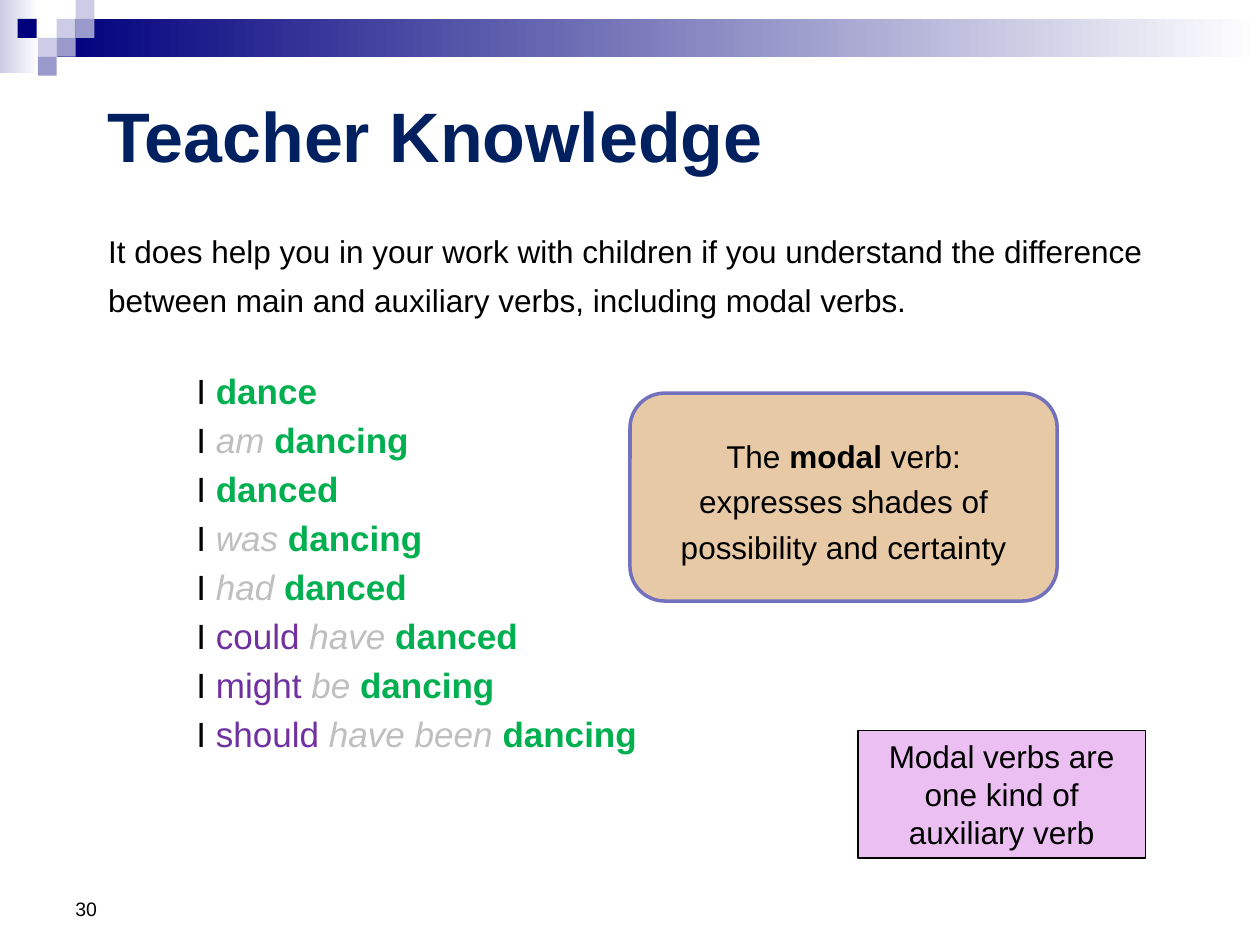
from pptx import Presentation
from pptx.dml.color import RGBColor
from pptx.enum import shapes, text
from pptx.util import Inches, Pt

BLACK, NAVY, LILAC, PALE = "000000", "00007D", "9999CC", "CCCCE6"

# Header: gradient bands, then small squares (left, top, colour)
BANDS = [((0, 0, 0.31, 0.58), PALE), ((0.45, 0.15, 9.55, 0.3), NAVY)]
SQUARE = 0.15
SQUARES = [
    (0.45, 0.15, PALE), (0.6, 0, PALE), (0.6, 0.15, LILAC), (0.3, 0.3, PALE),
    (0.14, 0.15, NAVY), (0.45, 0.3, LILAC), (0.3, 0.45, LILAC),
]

TITLE = "Teacher Knowledge"
INTRO = ("It does help you in your work with children if you understand the "
         "difference between main and auxiliary verbs, including modal verbs.")
# Each sentence: modal, auxiliary, main verb
SENTENCES = [
    ("", "", "dance"),
    ("", "am", "dancing"),
    ("", "", "danced"),
    ("", "was", "dancing"),
    ("", "had", "danced"),
    ("could", "have", "danced"),
    ("might", "be", "dancing"),
    ("should", "have been", "dancing"),
]
VERB_STYLES = [
    dict(color="7030A0"),
    dict(color="BFBFBF", italic=True),
    dict(color="00B050", bold=True),
]
MODAL_LINES = [
    [("The ", {}), ("modal", dict(bold=True)), (" verb:", {})],
    [("expresses shades of possibility and certainty", {})],
]
KIND_NOTE = "Modal verbs are one kind of auxiliary verb"
PAGE_NUMBER = "30"


def rgb(value):
    return RGBColor.from_string(value)


def add_run(paragraph, wording, size=18, color=BLACK, bold=False, italic=False):
    run = paragraph.add_run()
    run.text = wording
    font = run.font
    font.name, font.size = "Arial", Pt(size)
    font.bold, font.italic = bold, italic
    font.color.rgb = rgb(color)


def write(frame, lines, size=18, align=None, anchor=text.MSO_ANCHOR.TOP,
          spacing=None):
    """Fill a text frame; each line is a list of (wording, run format)."""
    frame.word_wrap = True
    frame.vertical_anchor = anchor
    for number, line in enumerate(lines):
        paragraph = frame.add_paragraph() if number else frame.paragraphs[0]
        paragraph.alignment = align
        if spacing:
            paragraph.line_spacing = Pt(spacing)
        for wording, style in line:
            add_run(paragraph, wording, **{"size": size, **style})


def add_box(slide, place, kind=shapes.MSO_SHAPE.RECTANGLE, fill=None,
            line=None, width=0.75):
    box = slide.shapes.add_shape(kind, *map(Inches, place))
    box.shadow.inherit = False
    if fill:
        box.fill.solid()
        box.fill.fore_color.rgb = rgb(fill)
    if line:
        box.line.color.rgb = rgb(line)
        box.line.width = Pt(width)
    else:
        box.line.fill.background()
    return box


def add_header(slide):
    for place, start in BANDS:
        band = add_box(slide, place)
        band.fill.gradient()
        band.fill.gradient_angle = 0
        for stop, color, position in zip(band.fill.gradient_stops,
                                         (start, "FFFFFF"), (0, 1)):
            stop.color.rgb = rgb(color)
            stop.position = position
    for left, top, color in SQUARES:
        add_box(slide, (left, top, SQUARE, SQUARE), fill=color)


def add_title(slide):
    title = slide.shapes.title
    title.left, title.top, title.width, title.height = map(
        Inches, (0.75, 0.44, 8.63, 1.25))
    title.text_frame.auto_size = text.MSO_AUTO_SIZE.NONE
    write(title.text_frame, [[(TITLE, dict(color="002060", bold=True))]],
          size=40, align=text.PP_ALIGN.LEFT, anchor=text.MSO_ANCHOR.MIDDLE)


def add_body(slide):
    lines = [[(INTRO, {})]]
    for verbs in SENTENCES:
        parts = [(verb, style) for verb, style in zip(verbs, VERB_STYLES) if verb]
        line = [("I ", dict(size=20))]
        for verb, style in parts:
            gap = "" if verb == verbs[-1] else " "
            line.append((verb + gap, dict(style, size=20)))
        lines.append(line)
    body = slide.shapes.add_textbox(*map(Inches, (0.67, 1.7, 8.74, 5.25)))
    write(body.text_frame, lines, spacing=28)
    intro, *sentences = body.text_frame.paragraphs
    sentences[0].space_before = Pt(25.4)
    for paragraph, indent in [(intro, 0.09)] + [(s, 0.79) for s in sentences]:
        properties = paragraph._p.get_or_add_pPr()
        properties.set("marL", str(Inches(indent)))
        properties.set("indent", "0")


def main():
    deck = Presentation()
    deck.slide_width, deck.slide_height = Inches(10), Inches(7.5)
    slide = deck.slides.add_slide(deck.slide_layouts[5])
    add_header(slide)
    add_title(slide)
    add_body(slide)

    number = slide.shapes.add_textbox(*map(Inches, (0.5, 6.83, 2.33, 0.52)))
    write(number.text_frame, [[(PAGE_NUMBER, {})]], size=11.1,
          anchor=text.MSO_ANCHOR.BOTTOM)

    modal = add_box(slide, (5, 3.12, 3.39, 1.65),
                    shapes.MSO_SHAPE.ROUNDED_RECTANGLE, "E8C9A6", "7171BD", 2)
    write(modal.text_frame, MODAL_LINES, align=text.PP_ALIGN.CENTER,
          anchor=text.MSO_ANCHOR.MIDDLE, spacing=26)

    kind = add_box(slide, (6.81, 5.8, 2.28, 1.01), fill="ECBFF3", line=BLACK)
    write(kind.text_frame, [[(KIND_NOTE, {})]], align=text.PP_ALIGN.CENTER)
    deck.save("out.pptx")


if __name__ == "__main__":
    main()
